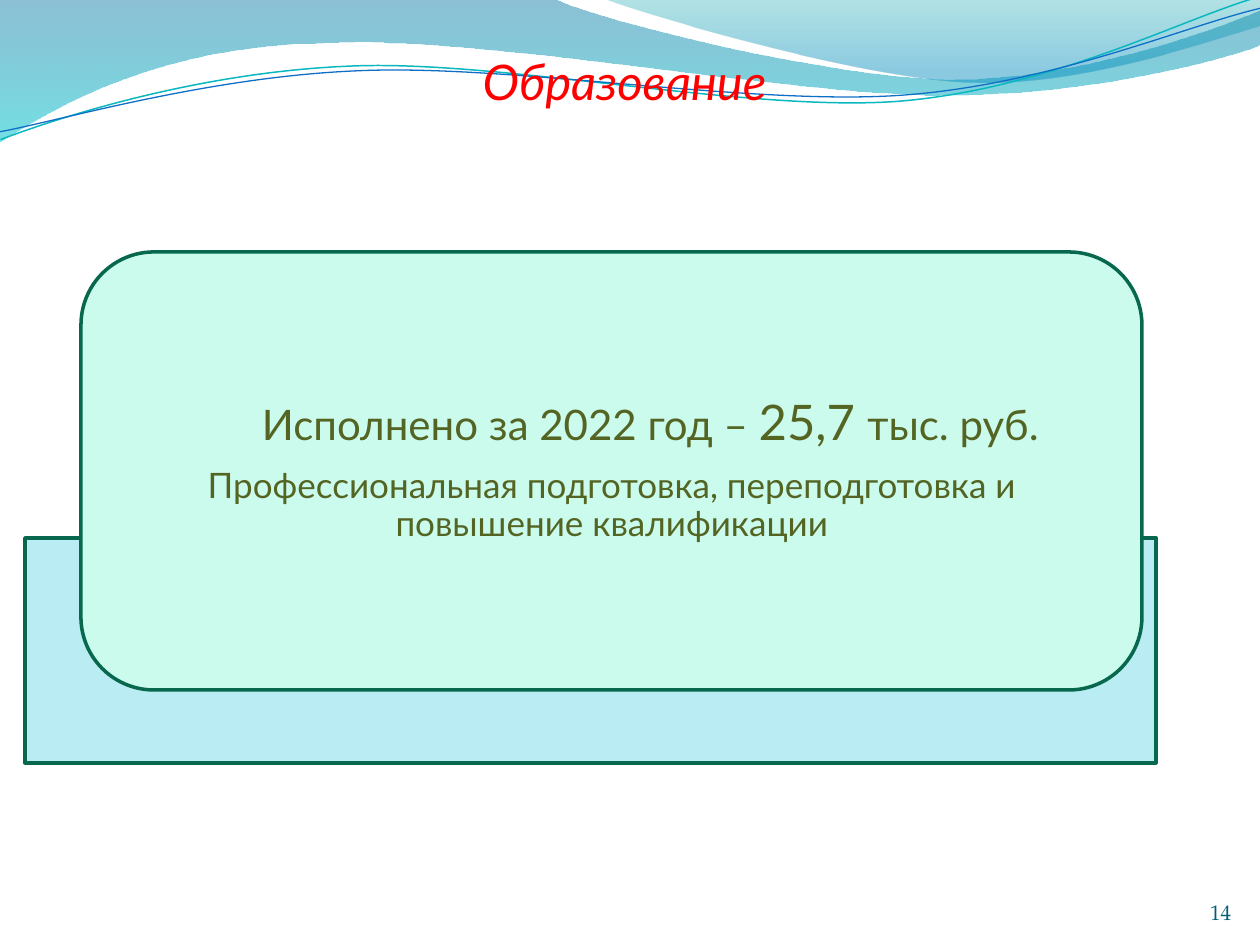
from dataclasses import dataclass

from pptx import Presentation
from pptx import util as u
from pptx.dml.color import RGBColor
from pptx.enum import shapes, text
from pptx.oxml import ns
from lxml import etree

PX = 914400 / 126
TILT = 357.3


@dataclass(frozen=True)
class Theme:
    head: str = "Lato"
    body: str = "TeX Gyre Pagella"
    title: str = "FF0000"
    number: str = "045D75"
    text: str = "546422"
    border: str = "08684E"
    back: str = "B3EAF2"
    card: str = "CAFBED"
    teal: str = "0AB8BF"
    blue: str = "0F6FC6"
    title_size: int = 28
    amount_size: int = 28
    text_size: int = 24
    note_size: int = 20
    number_size: int = 12


T = Theme()

WAVES = [
    ([(0, 0), (554, -1),
      (600, 21, 837, 79, 955, 79), (1075, 79, 1207, 33, 1260, 11),
      (1261, 45),
      (1239, 55, 1096, 96, 940, 95), (784, 95, 481, 35, 324, 43),
      (163, 45, 58, 105, -1, 142), (0, 0)],
     [(0, "0074A1", 45), (1, "00C6CF", 55)]),
    ([(604, -1),
      (641, 14, 859, 78, 969, 82), (1079, 87, 1211, 40, 1260, 26),
      (1260, 0), (604, -1)],
     [(0, "00A1A9", 30), (0.8, "008BBF", 45)]),
]
STRANDS = [
    ([(-2, 110), (59, 90, 200, 52, 350, 53), (499, 53, 745, 118, 896, 114),
      (1049, 109, 1184, 45, 1260, 27)], T.teal, 0.85),
    ([(-2, 102), (58, 94, 208, 57, 358, 58), (509, 58, 751, 112, 902, 108),
      (1052, 104, 1187, 52, 1263, 38)], T.blue, 0.75),
]


def px(n):
    return u.Emu(round(n * PX))


def rgb(value):
    return RGBColor.from_string(value)


def set_alpha(sp, percents):
    for clr, percent in zip(sp._element.spPr.iter(ns.qn("a:srgbClr")), percents):
        etree.SubElement(clr, ns.qn("a:alpha"), val=str(percent * 1000))


def add_curve(s, path, close):
    points = [seg[i:i + 2] for seg in path for i in range(0, len(seg), 2)]
    fb = s.shapes.build_freeform(*points[0], scale=PX)
    fb.add_line_segments(points[1:], close=close)
    sp = fb.convert_to_shape()
    sp.shadow.inherit = False
    lines = iter(list(sp._element.spPr.iter(ns.qn("a:lnTo"))))
    for seg in path[1:]:
        first = next(lines)
        if len(seg) == 6:
            first.addprevious(bez := etree.Element(ns.qn("a:cubicBezTo")))
            for line in (first, next(lines), next(lines)):
                bez.append(line[0])
                line.getparent().remove(line)
    return sp


def add_wave(s, path, stops):
    sp = add_curve(s, path, True)
    sp.fill.gradient()
    sp.fill.gradient_angle = 270
    for stop, (position, color, _) in zip(sp.fill.gradient_stops, stops):
        stop.position = position
        stop.color.rgb = rgb(color)
    set_alpha(sp, [alpha for _, _, alpha in stops])
    sp.line.fill.background()


def add_strand(s, path, color, width):
    sp = add_curve(s, path, False)
    sp.rotation = TILT
    sp.fill.background()
    sp.line.color.rgb = rgb(color)
    sp.line.width = u.Pt(width)


def add_panel(s, kind, box, color):
    sp = s.shapes.add_shape(kind, *map(px, box))
    sp.shadow.inherit = False
    sp.fill.solid()
    sp.fill.fore_color.rgb = rgb(color)
    sp.line.color.rgb = rgb(T.border)
    sp.line.width = u.Pt(2)
    return sp


def add_run(p, words, size, color, font=T.head, italic=None):
    r = p.add_run()
    r.text = words
    r.font.size = u.Pt(size)
    r.font.name = font
    r.font.italic = italic
    r.font.color.rgb = rgb(color)


def setup_frame(tf, anchor, side, top=0):
    tf.word_wrap = True
    tf.vertical_anchor = anchor
    tf.margin_left = tf.margin_right = px(side)
    tf.margin_top = tf.margin_bottom = px(top)


def add_title(s, words):
    sp = s.shapes.title
    s.shapes._spTree.append(sp._element)
    sp.left, sp.top, sp.width, sp.height = map(px, (74, 46, 1101, 72))
    tf = sp.text_frame
    setup_frame(tf, text.MSO_ANCHOR.TOP, 13, 6)
    p = tf.paragraphs[0]
    p.alignment = text.PP_ALIGN.CENTER
    add_run(p, words, T.title_size, T.title, italic=True)


def add_number(s, words):
    tf = s.shapes.add_textbox(*map(px, (963, 890, 268, 35))).text_frame
    setup_frame(tf, text.MSO_ANCHOR.BOTTOM, 0)
    p = tf.paragraphs[0]
    p.alignment = text.PP_ALIGN.RIGHT
    add_run(p, words, T.number_size, T.number, T.body)


def add_summary(s):
    tf = s.shapes.add_textbox(*map(px, (103, 273, 1018, 396))).text_frame
    setup_frame(tf, text.MSO_ANCHOR.MIDDLE, 30)
    p = tf.paragraphs[0]
    p._p.get_or_add_pPr().set("indent", str(px(129)))
    add_run(p, "Исполнено за 2022 год – ", T.text_size, T.text)
    add_run(p, "25,7 ", T.amount_size, T.text)
    add_run(p, "тыс. руб.", T.text_size, T.text)
    note = tf.add_paragraph()
    note.alignment = text.PP_ALIGN.CENTER
    add_run(note, "Профессиональная подготовка, переподготовка и повышение квалификации",
            T.note_size, T.text)
    for p in tf.paragraphs:
        p.line_spacing = 0.9
        p.space_after = u.Pt(10)


def main():
    prs = Presentation()
    prs.slide_width, prs.slide_height = px(1260), px(945)
    s = prs.slides.add_slide(prs.slide_layouts[5])
    for path, stops in WAVES:
        add_wave(s, path, stops)
    for path, color, width in STRANDS:
        add_strand(s, path, color, width)
    add_number(s, "14")
    add_title(s, "Образование")
    back = add_panel(s, shapes.MSO_SHAPE.RECTANGLE, (25, 538, 1131, 225), T.back)
    set_alpha(back, [90])
    add_panel(s, shapes.MSO_SHAPE.ROUNDED_RECTANGLE, (81, 252, 1061, 438), T.card)
    add_summary(s)
    prs.save("out.pptx")


if __name__ == "__main__":
    main()
